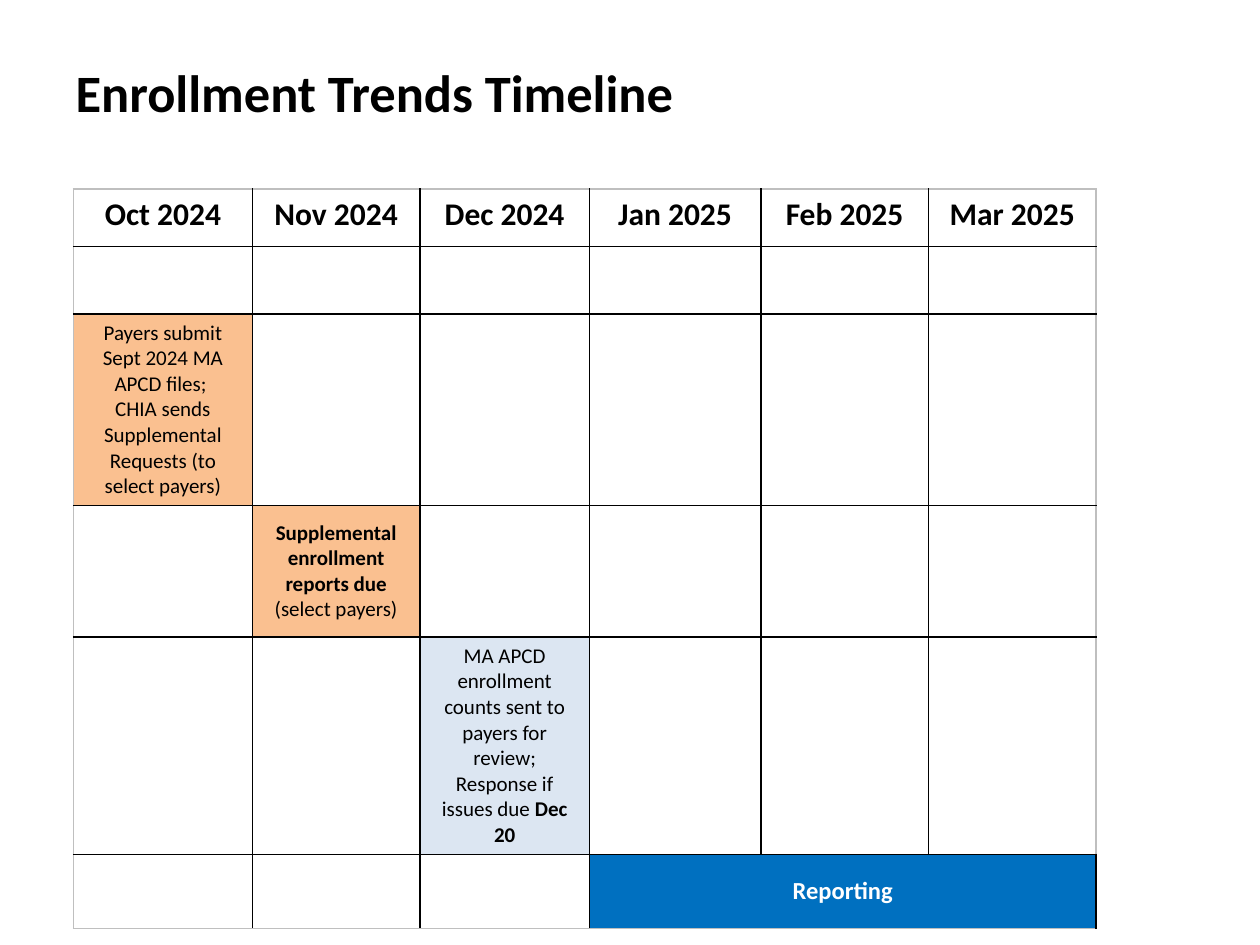
"""Build the enrollment trends timeline slide."""
from lxml import etree
from pptx import Presentation
from pptx.dml.color import RGBColor
from pptx.enum.text import MSO_ANCHOR, PP_ALIGN
from pptx.oxml.ns import qn
from pptx.util import Pt

MIDDLE = MSO_ANCHOR.MIDDLE
LEFT, CENTER = PP_ALIGN.LEFT, PP_ALIGN.CENTER
BLACK, WHITE, GREY = "000000", "FFFFFF", "BFBFBF"
ORANGE, PALE_BLUE, BLUE = "FAC090", "DCE6F2", "0070C0"


def style(font, size, color=BLACK, bold=None):
    """Set the typeface, size, colour and weight of a font."""
    font.name = "Calibri"
    font.size = Pt(size)
    font.color.rgb = RGBColor.from_string(color)
    font.bold = bold


def add_border(cell, side, color):
    """Draw a one-point line on one side of a cell."""
    line = etree.SubElement(cell._tc.get_or_add_tcPr(), qn(f"a:ln{side}"), w=str(Pt(1)))
    fill = etree.SubElement(line, qn("a:solidFill"))
    etree.SubElement(fill, qn("a:srgbClr"), val=color)


deck = Presentation()
deck.slide_width, deck.slide_height = Pt(720), Pt(540)
page = deck.slides.add_slide(deck.slide_layouts[5])

title = page.shapes.title
title.left, title.top, title.width, title.height = Pt(36), Pt(30.5), Pt(612), Pt(44)
title.text_frame.text = "Enrollment Trends Timeline"
title.text_frame.vertical_anchor = MIDDLE
para = title.text_frame.paragraphs[0]
para.alignment = LEFT
style(para.font, 30, bold=True)

months = ["Oct 2024", "Nov 2024", "Dec 2024", "Jan 2025", "Feb 2025", "Mar 2025"]
column_widths = [102.2, 95.8, 96.8, 98, 95.8, 95.8]
row_heights = [32.8, 38.6, 108, 75, 122.3, 42.3]
last_row, last_column = len(row_heights) - 1, len(column_widths) - 1

frame = page.shapes.add_table(
    len(row_heights), len(column_widths),
    Pt(42), Pt(108), Pt(sum(column_widths)), Pt(sum(row_heights)))
table = frame.table
table.first_row = table.horz_banding = False
for column, width in zip(table.columns, column_widths):
    column.width = Pt(width)
for row, height in zip(table.rows, row_heights):
    row.height = Pt(height)

for r in range(last_row + 1):
    for c in range(last_column + 1):
        cell = table.cell(r, c)
        outer_sides = {"L": c == 0, "R": c == last_column, "T": r == 0, "B": r == last_row}
        for side, is_outer in outer_sides.items():
            add_border(cell, side, GREY if is_outer else BLACK)
        cell.fill.background()

for c, month in enumerate(months):
    cell = table.cell(0, c)
    cell.text = month
    para = cell.text_frame.paragraphs[0]
    para.alignment = CENTER
    style(para.font, 18, bold=True)

table.cell(last_row, 3).merge(table.cell(last_row, last_column))
milestones = [
    (2, 0, ORANGE, 12, BLACK, [
        [("Payers submit Sept 2024 MA APCD files; ", False)],
        [("CHIA sends Supplemental Requests (to select payers)", False)]]),
    (3, 1, ORANGE, 12, BLACK, [
        [("Supplemental enrollment reports due ", True), ("(select payers)", False)]]),
    (4, 2, PALE_BLUE, 12, BLACK, [
        [("MA APCD enrollment counts sent to payers for review; Response if issues due ", False),
         ("Dec 20", True)]]),
    (last_row, 3, BLUE, 14, WHITE, [[("Reporting", True)]]),
]
for r, c, fill, size, color, paragraphs in milestones:
    cell = table.cell(r, c)
    cell.vertical_anchor = MIDDLE
    cell.fill.solid()
    cell.fill.fore_color.rgb = RGBColor.from_string(fill)
    for number, spans in enumerate(paragraphs):
        para = cell.text_frame.add_paragraph() if number else cell.text_frame.paragraphs[0]
        para.alignment = CENTER
        for text, bold in spans:
            span = para.add_run()
            span.text = text
            style(span.font, size, color, bold)

deck.save("out.pptx")
